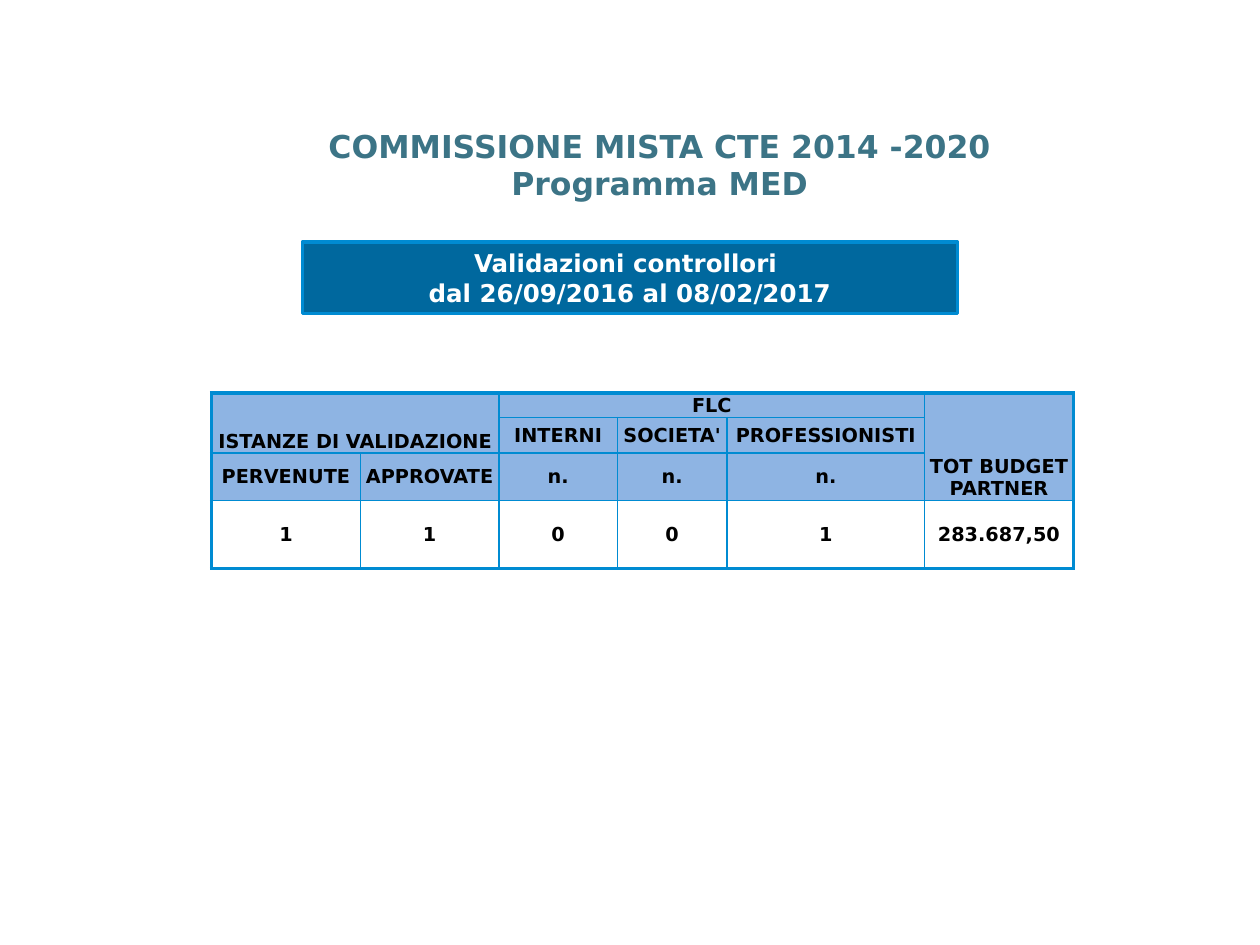
from lxml.etree import SubElement
from pptx import Presentation
from pptx.dml.color import RGBColor
from pptx.enum.shapes import MSO_SHAPE
from pptx.enum.text import MSO_ANCHOR, PP_ALIGN
from pptx.oxml.ns import qn
from pptx.util import Inches, Pt

FONT = "DejaVu Sans"
COLORS = {
    "title": "3C7486",
    "banner": "00689E",
    "line": "008BD2",
    "head": "8EB4E3",
    "white": "FFFFFF",
    "black": "000000",
}
WIDTHS = [1.18, 1.1, 0.94, 0.87, 1.57, 1.18]
HEIGHTS = [0.17, 0.28, 0.22, 0.54]
ROWS = [
    ["ISTANZE DI VALIDAZIONE", "", "FLC", "", "", "TOT BUDGET PARTNER"],
    ["", "", "INTERNI", "SOCIETA'", "PROFESSIONISTI", ""],
    ["PERVENUTE", "APPROVATE", "n.", "n.", "n.", ""],
    ["1", "1", "0", "0", "1", "283.687,50"],
]
SPANS = [((0, 0), (1, 1)), ((0, 2), (0, 4)), ((0, 5), (2, 5))]
LOW = [start for start, end in SPANS]


def color(name):
    return RGBColor.from_string(COLORS[name])


def write(frame, text, size, ink):
    frame.text = text
    for para in frame.paragraphs:
        para.alignment = PP_ALIGN.CENTER
        for run in para.runs:
            run.font.name = FONT
            run.font.size = Pt(size)
            run.font.bold = True
            run.font.color.rgb = color(ink)


def add_title(slide, text, box):
    frame = slide.shapes.add_textbox(*map(Inches, box)).text_frame
    frame.word_wrap = False
    frame.vertical_anchor = MSO_ANCHOR.MIDDLE
    write(frame, text, 18, "title")


def add_banner(slide, text, box):
    shape = slide.shapes.add_shape(MSO_SHAPE.RECTANGLE, *map(Inches, box))
    shape.shadow.inherit = False
    shape.fill.solid()
    shape.fill.fore_color.rgb = color("banner")
    shape.line.color.rgb = color("line")
    shape.line.width = Pt(2)
    write(shape.text_frame, text, 14, "white")


def add_edges(cell, row, col):
    outer = {
        "a:lnL": col == 0,
        "a:lnR": col == len(WIDTHS) - 1,
        "a:lnT": row == 0,
        "a:lnB": row == len(HEIGHTS) - 1,
    }
    props = cell._tc.get_or_add_tcPr()
    for tag, thick in outer.items():
        edge = SubElement(props, qn(tag), w=str(Pt(2.25 if thick else 1)))
        fill = SubElement(edge, qn("a:solidFill"))
        SubElement(fill, qn("a:srgbClr"), val=COLORS["line"])


def style_cell(cell, row, col):
    cell.margin_left = cell.margin_right = cell.margin_top = Inches(0.01)
    cell.margin_bottom = 0
    low = (row, col) in LOW
    cell.vertical_anchor = MSO_ANCHOR.BOTTOM if low else MSO_ANCHOR.MIDDLE
    write(cell.text_frame, ROWS[row][col], 11, "black")
    add_edges(cell, row, col)
    if row < len(ROWS) - 1:
        cell.fill.solid()
        cell.fill.fore_color.rgb = color("head")
    else:
        cell.fill.background()


def add_grid(slide, left, top):
    box = map(Inches, (left, top, sum(WIDTHS), sum(HEIGHTS)))
    table = slide.shapes.add_table(len(ROWS), len(WIDTHS), *box).table
    table.first_row = table.horz_banding = False
    for column, width in zip(table.columns, WIDTHS):
        column.width = Inches(width)
    for line, height in zip(table.rows, HEIGHTS):
        line.height = Inches(height)
    for start, end in SPANS:
        table.cell(*start).merge(table.cell(*end))
    for row in range(len(ROWS)):
        for col in range(len(WIDTHS)):
            style_cell(table.cell(row, col), row, col)


def main():
    deck = Presentation()
    deck.slide_width, deck.slide_height = Inches(10), Inches(7.5)
    slide = deck.slides.add_slide(deck.slide_layouts[6])
    add_title(slide, "COMMISSIONE MISTA CTE 2014 -2020\nProgramma MED",
              (1.93, 0.99, 6.61, 0.63))
    add_grid(slide, 1.68, 3.12)
    add_banner(slide, "Validazioni controllori \ndal 26/09/2016 al 08/02/2017",
               (2.4, 1.92, 5.2, 0.57))
    deck.save("out.pptx")


if __name__ == "__main__":
    main()
